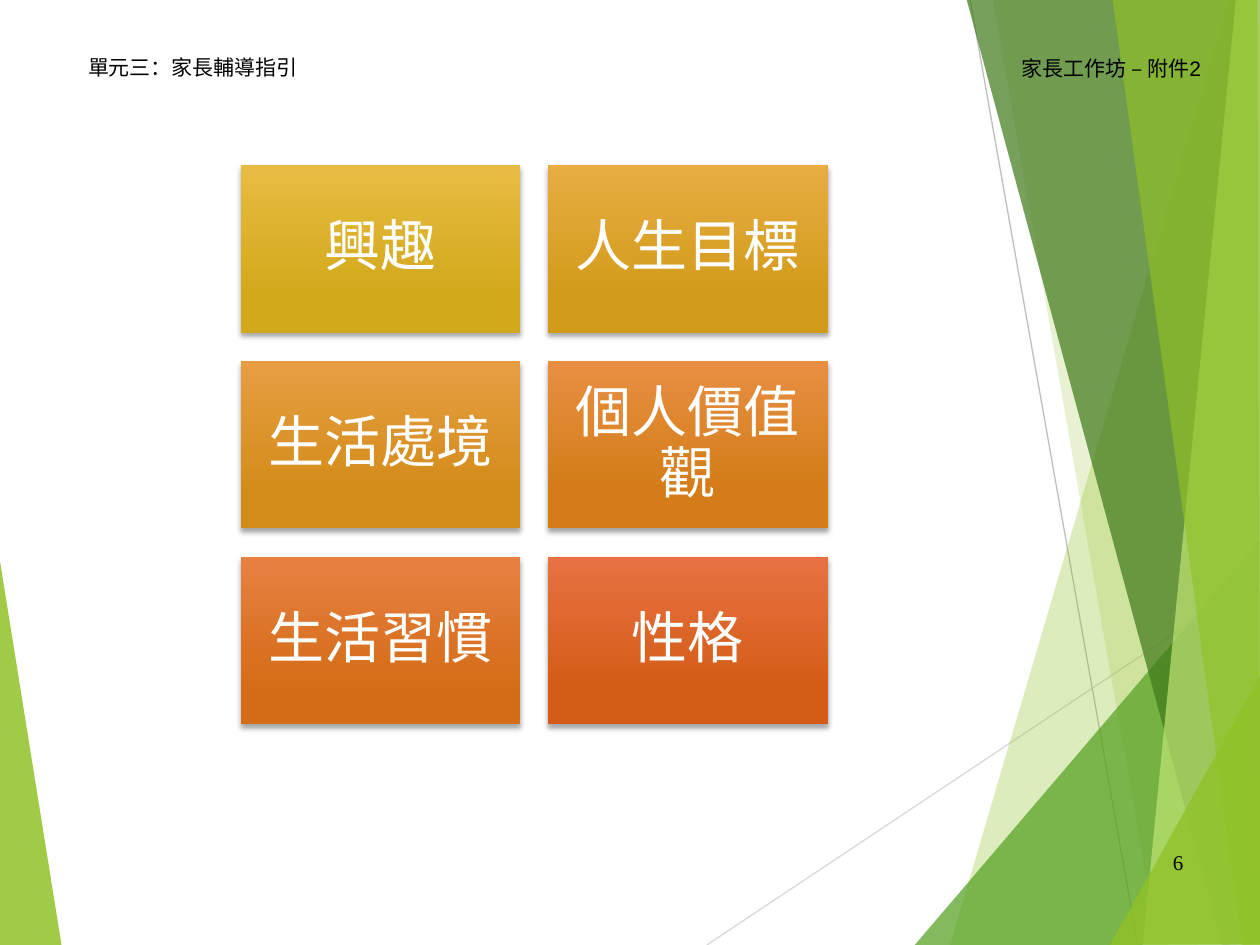
from dataclasses import dataclass

from lxml.etree import SubElement
from pptx import Presentation
from pptx.dml.color import RGBColor
from pptx.enum.shapes import MSO_CONNECTOR as Link, MSO_SHAPE as Preset
from pptx.enum.text import MSO_ANCHOR as Anchor, PP_ALIGN as Align
from pptx.oxml.ns import qn
from pptx.util import Inches, Pt


@dataclass(frozen=True)
class Theme:
    lime: str = "90C226"
    green: str = "54A021"
    forest: str = "3F7819"
    pale: str = "C0E474"
    ink: str = "000000"
    white: str = "FFFFFF"
    small: int = 12
    large: int = 32
    sans: str = "Arial"
    serif: str = "Times New Roman"
    cjk: str = "Noto Sans CJK TC"


THEME = Theme()

LEFT_FACET = (THEME.lime, 85, [(-0.01, 4.39), (0.49, 7.51), (-0.01, 7.5)])
RAYS = [
    ("D9D9D9", (5.61, 7.5), (10.01, 4.57)),
    ("BFBFBF", (7.7, 0), (9.03, 7.5)),
]
RIGHT_FACETS = [
    (THEME.lime, 30, [(9.75, 0), (7.54, 7.5), (10.02, 7.51), (10.01, 0.01)]),
    (THEME.lime, 20, [(7.88, -0.01), (9.19, 7.5), (10.01, 7.5), (10.01, -0.01)]),
    (THEME.green, 72, [(7.26, 7.5), (10, 4.29), (10.01, 7.5)]),
    (THEME.forest, 70, [(7.67, -0.01), (9.7, 7.5), (10.01, 7.49), (10.01, -0.01)]),
    (THEME.pale, 70, [(9.81, -0.01), (9.07, 7.5), (10.01, 7.5), (10, -0.01)]),
    (THEME.lime, 65, [(8.83, -0.01), (9.86, 7.5), (10, 7.5), (9.98, -0.01)]),
    (THEME.lime, 80, [(8.81, 7.5), (10.01, 5.35), (10.01, 7.49)]),
]
LABELS = [
    ("單元三：家長輔導指引", (0.6, 0.38, 2.92, 0.3), Align.LEFT, Anchor.TOP, THEME.sans),
    ("家長工作坊 – 附件2", (6.71, 0.39, 2.92, 0.3), Align.RIGHT, Anchor.TOP, THEME.sans),
    ("6", (8.93, 6.64, 0.56, 0.4), Align.RIGHT, Anchor.MIDDLE, THEME.serif),
]
CARDS = [
    ("興趣", "E7BC43", "D2A91B"),
    ("人生目標", "E7AD43", "D39B1A"),
    ("生活處境", "E79E43", "D38C19"),
    ("個人價值觀", "E88F42", "D37C18"),
    ("生活習慣", "E88042", "D36D17"),
    ("性格", "E87242", "D35D16"),
]
COLUMNS = 2
GRID_LEFT, GRID_TOP = 1.91, 1.31
CARD_WIDTH, CARD_HEIGHT = 2.22, 1.33
STEP_X, STEP_Y = 2.44, 1.555
CARD_INSET = 0.13


def color(code):
    """Turn a hex code into a colour."""
    return RGBColor.from_string(code)


def set_alpha(parent, percent):
    """Set the opacity of the RGB colour inside an element."""
    tone = next(parent.iter(qn("a:srgbClr")))
    SubElement(tone, qn("a:alpha"), val=str(percent * 1000))


def add_facet(page, code, opacity, points):
    """Draw one translucent polygon."""
    corners = [(Inches(x), Inches(y)) for x, y in points]
    builder = page.shapes.build_freeform(*corners[0])
    builder.add_line_segments(corners[1:], close=True)
    facet = builder.convert_to_shape()
    facet.shadow.inherit = False
    facet.fill.solid()
    facet.fill.fore_color.rgb = color(code)
    set_alpha(facet.element.spPr, opacity)
    facet.line.fill.background()


def add_ray(page, code, start, end):
    """Draw one thin background line."""
    ray = page.shapes.add_connector(Link.STRAIGHT, *map(Inches, start + end))
    ray.line.color.rgb = color(code)
    ray.line.width = Pt(0.75)
    SubElement(ray.element.spPr, qn("a:effectLst"))


def write(box, text, align, anchor, font, size, code):
    """Put one formatted run into a shape."""
    frame = box.text_frame
    frame.word_wrap = True
    frame.vertical_anchor = anchor
    para = frame.paragraphs[0]
    para.alignment = align
    span = para.add_run()
    span.text = text
    span.font.name = font
    span.font.size = Pt(size)
    span.font.color.rgb = color(code)
    return frame, para, span


def add_label(page, text, place, align, anchor, font):
    """Add a small text box."""
    box = page.shapes.add_textbox(*map(Inches, place))
    write(box, text, align, anchor, font, THEME.small, THEME.ink)


def add_card(page, index, text, top_code, bottom_code):
    """Add one gradient card at its grid position."""
    row, column = divmod(index, COLUMNS)
    place = (GRID_LEFT + column * STEP_X, GRID_TOP + row * STEP_Y, CARD_WIDTH, CARD_HEIGHT)
    card = page.shapes.add_shape(Preset.RECTANGLE, *map(Inches, place))
    card.line.fill.background()
    card.fill.gradient()
    card.fill.gradient_angle = 270
    for stop, position, code in zip(card.fill.gradient_stops, (0, 0.78), (top_code, bottom_code)):
        stop.position = position
        stop.color.rgb = color(code)
    card.shadow.inherit = False
    effects = card.element.spPr.find(qn("a:effectLst"))
    shadow = SubElement(effects, qn("a:outerShdw"), blurRad=str(Pt(3)), dist=str(Pt(2)),
                        dir="5400000", rotWithShape="0")
    SubElement(shadow, qn("a:srgbClr"), val=THEME.ink)
    set_alpha(shadow, 35)

    frame, para, span = write(card, text, Align.CENTER, Anchor.MIDDLE, THEME.cjk,
                              THEME.large, THEME.white)
    frame.margin_left = frame.margin_right = Inches(CARD_INSET)
    frame.margin_top = frame.margin_bottom = Inches(CARD_INSET)
    para.line_spacing = 0.9
    para.space_after = Pt(0.35 * THEME.large)
    SubElement(span.font._element, qn("a:ea"), typeface=THEME.cjk)


def main():
    """Build the slide and save it."""
    deck = Presentation()
    deck.slide_width, deck.slide_height = Inches(10), Inches(7.5)
    page = deck.slides.add_slide(deck.slide_layouts[6])
    add_facet(page, *LEFT_FACET)
    for ray in RAYS:
        add_ray(page, *ray)
    for facet in RIGHT_FACETS:
        add_facet(page, *facet)
    for label in LABELS:
        add_label(page, *label)
    for index, card in enumerate(CARDS):
        add_card(page, index, *card)
    deck.save("out.pptx")


if __name__ == "__main__":
    main()
